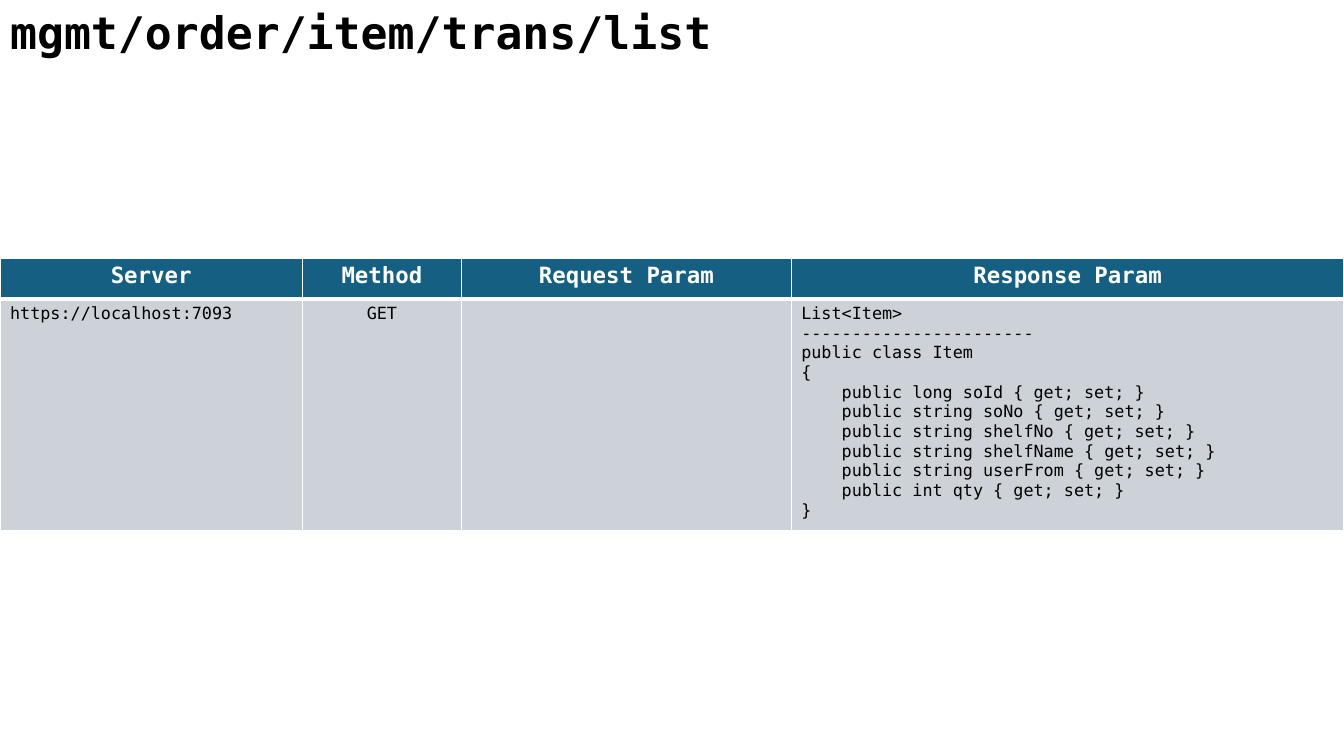
from lxml import etree
from pptx import Presentation
from pptx.dml.color import RGBColor
from pptx.enum import text
from pptx.oxml import ns
from pptx.util import Cm, Pt

FONT = "DejaVu Sans Mono"
COLORS = {"header": "156082", "body": "CCD2D8", "white": "FFFFFF", "black": "000000"}
LEFT, CENTER = text.PP_ALIGN.LEFT, text.PP_ALIGN.CENTER


def add_run(p, content, size, color, bold):
    r = p.add_run()
    r.text = content
    r.font.name = FONT
    r.font.size = Pt(size)
    r.font.bold = bold
    r.font.color.rgb = RGBColor.from_string(COLORS[color])


def add_border(cell, side, width):
    ln = etree.SubElement(cell._tc.get_or_add_tcPr(), ns.qn(f"a:ln{side}"), w=str(Pt(width)))
    fill = etree.SubElement(ln, ns.qn("a:solidFill"))
    etree.SubElement(fill, ns.qn("a:srgbClr"), val=COLORS["white"])


prs = Presentation()
prs.slide_width, prs.slide_height = Cm(33.87), Cm(19.05)
s = prs.slides.add_slide(prs.slide_layouts[5])

title = s.shapes.title
title.left, title.top, title.width, title.height = Cm(0), Cm(0), Cm(23.16), Cm(1.62)
tf = title.text_frame
tf.word_wrap = True
tf.auto_size = text.MSO_AUTO_SIZE.SHAPE_TO_FIT_TEXT
tf.vertical_anchor = text.MSO_ANCHOR.TOP
p = tf.paragraphs[0]
p.alignment = LEFT
add_run(p, "mgmt/order/item/trans/list", 32, "black", True)

item_class = """List<Item>
-----------------------
public class Item
{
    public long soId { get; set; }
    public string soNo { get; set; }
    public string shelfNo { get; set; }
    public string shelfName { get; set; }
    public string userFrom { get; set; }
    public int qty { get; set; }
}"""
columns = [
    ("Server", 7.62, "https://localhost:7093", LEFT),
    ("Method", 4.01, "GET", CENTER),
    ("Request Param", 8.31, "", LEFT),
    ("Response Param", 13.93, item_class, LEFT),
]
row_heights = [1.03, 5.7]

table = s.shapes.add_table(2, len(columns), Cm(0), Cm(6.5), Cm(33.87), Cm(sum(row_heights))).table
for row, height in zip(table.rows, row_heights):
    row.height = Cm(height)

for col, (heading, width, value, align) in enumerate(columns):
    table.columns[col].width = Cm(width)
    rows = [
        (heading, CENTER, 16, "white", True, "header", (1, 1, 1, 3)),
        (value, align, 12, "black", False, "body", (1, 1, 3, 1)),
    ]
    for row, (content, alignment, size, color, bold, fill, borders) in enumerate(rows):
        cell = table.cell(row, col)
        for side, line_width in zip("LRTB", borders):
            add_border(cell, side, line_width)
        cell.fill.solid()
        cell.fill.fore_color.rgb = RGBColor.from_string(COLORS[fill])
        tf = cell.text_frame
        for i, line in enumerate(content.splitlines()):
            p = tf.add_paragraph() if i else tf.paragraphs[0]
            p.alignment = alignment
            add_run(p, line, size, color, bold)

prs.save("out.pptx")
